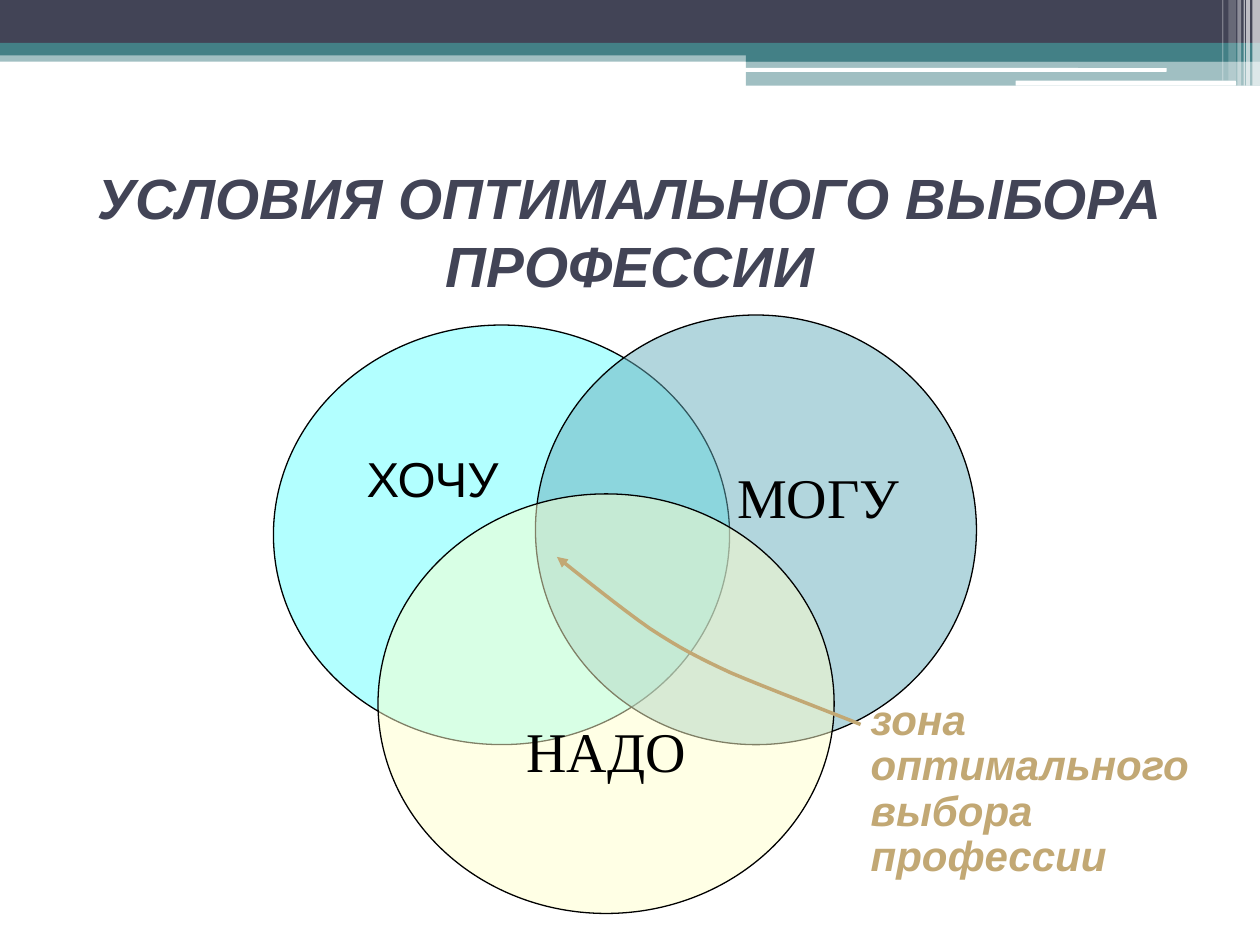
from pptx import Presentation
from pptx.dml.color import RGBColor
from pptx.enum.shapes import MSO_SHAPE as Shape
from pptx.enum.text import MSO_ANCHOR as Anchor, PP_ALIGN as Align
from pptx.oxml.ns import qn
from pptx.util import Inches, Pt
from lxml.etree import SubElement

WIDTH, HEIGHT = 10, 7.5
INK, TEAL, WHITE, SAND, BLACK = "424456", "438086", "FFFFFF", "C2A874", "000000"

BARS = [
    ((0, 0.4, WIDTH, 0.09), TEAL, 50),
    ((0, 0, WIDTH, 0.34), INK, 100),
    ((0, 0.34, WIDTH, 0.1), TEAL, 100),
    ((5.92, 0.39, 4.08, 0.1), TEAL, 100),
    ((5.92, 0.48, 4.08, 0.2), TEAL, 50),
]
ROUNDED_BARS = [(5.91, 0.54, 3.35, 0.03), (8.06, 0.64, 1.75, 0.04)]
STRIPES = [
    (9.94, 0.06, 0.68, 65), (9.89, 0.03, 0.68, 65), (9.87, 0.01, 0.68, 60),
    (9.82, 0.03, 0.68, 40), (9.75, 0.06, 0.64, 20), (9.7, 0.01, 0.64, 30),
]
TITLE = "УСЛОВИЯ ОПТИМАЛЬНОГО ВЫБОРА ПРОФЕССИИ"
CIRCLES = [
    ("ХОЧУ", (2.17, 2.58, 3.62, 3.33), "66FFFF",
     dict(size=28, align=Align.LEFT, margins=(0.21, 0.49, 0, 0))),
    ("МОГУ", (4.25, 2.5, 3.5, 3.41), "67AFBD",
     dict(size=32, font="Times New Roman", align=Align.RIGHT, margins=(0, 0.67, 0.1, 0))),
    ("НАДО", (3, 3.92, 3.62, 3.33), "FFFFCC",
     dict(size=32, font="Times New Roman", align=Align.CENTER, margins=(0, 1.28, 0, 0))),
]
NOTE = "зона оптимального выбора профессии"
ARROW_START = (6.83, 5.75)
ARROW_CURVES = [
    ((6.66, 5.68), (6.08, 5.46), (5.8, 5.34)),
    ((5.52, 5.21), (5.39, 5.14), (5.16, 4.99)),
    ((4.93, 4.83), (4.57, 4.54), (4.42, 4.42)),
]
CURVE_STEPS = 8


def color(value):
    return RGBColor.from_string(value)


def add_shape(slide, kind, place, fill, opacity=100, line=None):
    shape = slide.shapes.add_shape(kind, *map(Inches, place))
    shape.shadow.inherit = False
    shape.fill.solid()
    shape.fill.fore_color.rgb = color(fill)
    if opacity < 100:
        tint = shape.fill._xPr.find(qn("a:solidFill"))[0]
        SubElement(tint, qn("a:alpha"), val=str(opacity * 1000))
    if line:
        shape.line.color.rgb = color(line)
        shape.line.width = Pt(0.75)
    else:
        shape.line.fill.background()
    return shape


def write(box, text, size, font="Arial", ink=BLACK, align=Align.LEFT, strong=False,
          anchor=Anchor.TOP, margins=(0.1, 0.05, 0.1, 0.05), spacing=None):
    frame = box.text_frame
    frame.word_wrap = True
    frame.vertical_anchor = anchor
    (frame.margin_left, frame.margin_top,
     frame.margin_right, frame.margin_bottom) = map(Inches, margins)
    para = frame.paragraphs[0]
    para.alignment = align
    para.line_spacing = spacing
    span = para.add_run()
    span.text = text
    span.font.size, span.font.name = Pt(size), font
    span.font.bold = span.font.italic = strong
    span.font.color.rgb = color(ink)


def curve_points(start, curves):
    for first, second, end in curves:
        for step in range(1, CURVE_STEPS + 1):
            t = step / CURVE_STEPS
            u = 1 - t
            yield tuple(Inches(u**3 * a + 3 * u * u * t * b + 3 * u * t * t * c + t**3 * d)
                        for a, b, c, d in zip(start, first, second, end))
        start = end


def add_arrow(slide):
    builder = slide.shapes.build_freeform(*map(Inches, ARROW_START))
    builder.add_line_segments(curve_points(ARROW_START, ARROW_CURVES), close=False)
    arrow = builder.convert_to_shape()
    arrow.shadow.inherit = False
    arrow.fill.background()
    arrow.line.color.rgb = color(SAND)
    arrow.line.width = Pt(2)
    SubElement(arrow.line._get_or_add_ln(), qn("a:tailEnd"), type="triangle")


def main():
    """Build the slide on the conditions for choosing a profession."""
    deck = Presentation()
    deck.slide_width, deck.slide_height = Inches(WIDTH), Inches(HEIGHT)
    slide = deck.slides.add_slide(deck.slide_layouts[6])

    for place, fill, opacity in BARS:
        add_shape(slide, Shape.RECTANGLE, place, fill, opacity)
    for place in ROUNDED_BARS:
        add_shape(slide, Shape.ROUNDED_RECTANGLE, place, WHITE)
    for left, width, height, opacity in STRIPES:
        add_shape(slide, Shape.RECTANGLE, (left, 0, width, height), WHITE, opacity)

    title = slide.shapes.add_textbox(*map(Inches, (0.5, 1.25, 9, 1.17)))
    write(title, TITLE, 32.4, ink=INK, align=Align.CENTER, strong=True, anchor=Anchor.MIDDLE)
    for label, place, fill, style in CIRCLES:
        write(add_shape(slide, Shape.OVAL, place, fill, 50, BLACK), label, **style)
    add_arrow(slide)
    note = slide.shapes.add_textbox(*map(Inches, (6, 5.5, 3.75, 1.33)))
    write(note, NOTE, 24, ink=SAND, strong=True, margins=(0.91, 0.05, 0.1, 0.05), spacing=0.9)
    deck.save("out.pptx")


if __name__ == "__main__":
    main()
